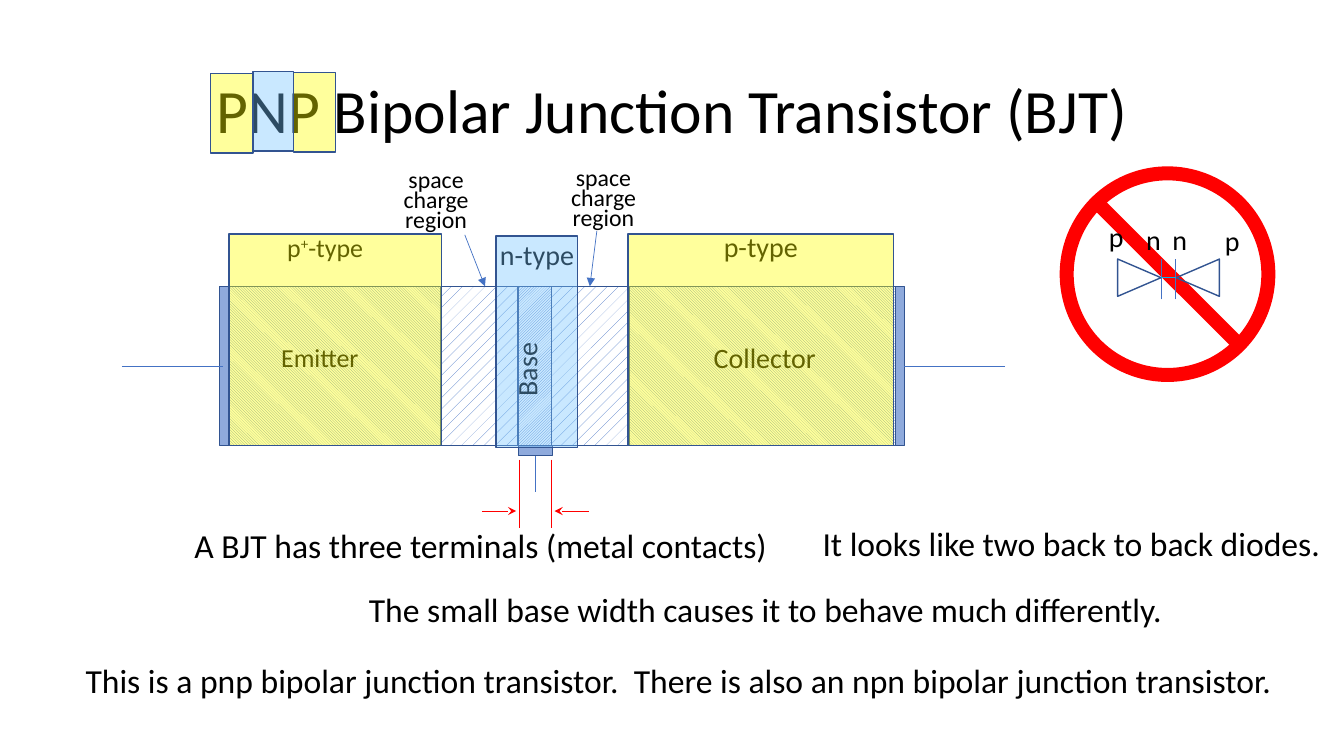
from pptx import Presentation
from pptx.dml.color import RGBColor
from pptx.enum.dml import MSO_PATTERN
from pptx.enum.shapes import MSO_CONNECTOR, MSO_SHAPE
from pptx.enum.text import MSO_ANCHOR, PP_ALIGN
from pptx.oxml.ns import qn
from pptx.util import Inches, Pt
from lxml.etree import SubElement

COLOURS = {"ink": "000000", "paper": "FFFFFF", "blue": "4472C4", "edge": "325491",
           "metal": "8FAADC", "red": "FF0000", "cyan": "00B0F0",
           "p": "FFFF00", "n": "75C4FF"}

# Device geometry in inches
TOP, HEIGHT = 2.84, 1.58
BOTTOM, MIDDLE = TOP + HEIGHT, TOP + HEIGHT / 2
LEFT, RIGHT = 2.27, 8.88
BASE_LEFT, BASE_RIGHT = 5.14, 5.47
METAL, LEAD = 0.09, 1.0
DIODE_X, DIODE_Y, DIODE_GAP = 11.59, 2.75, 0.14

# Content: (runs, left, top, width, height, size)
TITLE = (["PNP Bipolar Junction Transistor (BJT)"], 0.92, 0.4, 11.5, 1.45, 44)
REGION_NOTES = [(["space charge region"], left, top, 1.29, 0.72, 17)
                for left, top in ((5.34, 1.64), (3.68, 1.66))]
LABELS = [
    (["p", "+", "-type"], 2.75, 2.28, 1.01, 0.44, 18.5),
    (["n-type"], 4.86, 2.34, 1.01, 0.44, 20),
    (["p-type"], 7.08, 2.27, 1.01, 0.44, 20),
    (["Emitter"], 2.69, 3.37, 1.01, 0.44, 18.5),
    (["Collector"], 6.98, 3.37, 1.34, 0.44, 20),
]
BASE_LABEL = (["Base"], 5.04, 3.04, 0.52, 0.99, 20)
DIODE_LABELS = [([letter], left, top, 0.32, 0.43, 20) for letter, left, top in (
    ("p", 10.9, 2.17), ("p", 12.05, 2.21), ("n", 11.27, 2.2), ("n", 11.53, 2.2))]
STATEMENTS = [
    (["It looks like two back to back diodes."], 8.06, 5.18, 5.16, 0.63, 24),
    (["A BJT has three terminals (metal contacts)"], 1.83, 5.2, 10.39, 0.61, 24),
    (["This is a pnp bipolar junction transistor.  There is also an npn bipolar "
      "junction transistor."], 0.75, 6.54, 12.46, 0.51, 24),
    (["The small base width causes it to behave much differently."],
     3.56, 5.84, 8.19, 0.64, 24),
]
# Hatched silicon: (left, width, pattern)
HATCHES = [
    (LEFT, RIGHT - LEFT, MSO_PATTERN.LIGHT_DOWNWARD_DIAGONAL),
    (BASE_LEFT, 0.52, MSO_PATTERN.LIGHT_UPWARD_DIAGONAL),
    (4.37, 0.77, MSO_PATTERN.PERCENT_10),
    (BASE_RIGHT, 0.77, MSO_PATTERN.PERCENT_10),
]
CONTACTS = [(LEFT - METAL, TOP, METAL, HEIGHT), (RIGHT, TOP, METAL, HEIGHT),
            (BASE_LEFT, BOTTOM, 0.34, 0.1)]
# Translucent tints: (kind, left, top, width, height)
TINTS = [
    ("p", 2.09, 0.73, 0.42, 0.79), ("p", LEFT, 2.32, 2.11, 2.1),
    ("n", 2.51, 0.71, 0.4, 0.79), ("n", 4.92, 2.34, 0.81, 2.1),
    ("p", 2.91, 0.72, 0.42, 0.79), ("p", 6.23, 2.32, 2.63, 2.1),
]

deck = Presentation()
deck.slide_width, deck.slide_height = Inches(13.33), Inches(7.5)
page = deck.slides.add_slide(deck.slide_layouts[6])


def colour(name):
    return RGBColor.from_string(COLOURS[name])


def add_text(content, align=PP_ALIGN.LEFT, spacing=0.9, before=10, anchor=MSO_ANCHOR.TOP):
    runs, *place, size = content
    box = page.shapes.add_textbox(*map(Inches, place))
    box.text_frame.word_wrap = True
    box.text_frame.vertical_anchor = anchor
    para = box.text_frame.paragraphs[0]
    para.alignment, para.line_spacing, para.space_before = align, spacing, Pt(before)
    for text in runs:
        span = para.add_run()
        span.text = text
        span.font.name, span.font.size = "Calibri", Pt(size)
        span.font.color.rgb = colour("ink")
        if text == "+":
            span.font._element.set("baseline", "30000")
    return box


def add_outline(kind, left, top, width, height, line="edge", weight=1):
    shape = page.shapes.add_shape(kind, *map(Inches, (left, top, width, height)))
    shape.shadow.inherit = False
    shape.fill.background()
    shape.line.color.rgb = colour(line)
    shape.line.width = Pt(weight)
    return shape


def add_block(place, fill, alpha=None):
    block = add_outline(MSO_SHAPE.RECTANGLE, *place)
    block.fill.solid()
    block.fill.fore_color.rgb = colour(fill)
    if alpha:
        tone = block._element.spPr.find(qn("a:solidFill"))[0]
        SubElement(tone, qn("a:alpha")).set("val", str(alpha * 1000))


def add_line(x1, y1, x2, y2, line="blue", weight=0.5, arrow=None):
    link = page.shapes.add_connector(MSO_CONNECTOR.STRAIGHT, *map(Inches, (x1, y1, x2, y2)))
    link.line.color.rgb = colour(line)
    link.line.width = Pt(weight)
    if arrow:
        SubElement(link.line._get_or_add_ln(), qn("a:tailEnd")).set("type", arrow)
    SubElement(link._element.spPr, qn("a:effectLst"))


# Title
add_text(TITLE, PP_ALIGN.CENTER, before=0, anchor=MSO_ANCHOR.MIDDLE)

# Hatched silicon
for left, width, pattern in HATCHES:
    hatch = add_outline(MSO_SHAPE.RECTANGLE, left, TOP, width, HEIGHT)
    hatch.fill.patterned()
    hatch.fill.pattern = pattern
    hatch.fill.fore_color.rgb = colour("blue")
    hatch.fill.back_color.rgb = colour("paper")

# Labels and pointers to the space charge regions
for label in LABELS:
    add_text(label)
for note in REGION_NOTES:
    add_text(note, PP_ALIGN.CENTER, spacing=0.7)
add_text(BASE_LABEL).text_frame._txBody.bodyPr.set("vert", "vert270")
add_line(4.61, 2.33, 4.81, TOP, arrow="triangle")
add_line(5.92, 2.29, 5.85, TOP, arrow="triangle")

# Metal contacts and leads
for contact in CONTACTS:
    add_block(contact, "metal")
add_line(1.21, MIDDLE, 1.21 + LEAD, MIDDLE)
add_line(RIGHT + METAL + LEAD, MIDDLE, RIGHT + METAL, MIDDLE)
add_line(5.31, 4.88, 5.31, BOTTOM + 0.1)

# Prohibition sign
add_outline(MSO_SHAPE.OVAL, 10.58, 1.72, 2, 2, "red", 10)
add_line(10.88, 2.01, 12.29, 3.42, "red", 10)

# Doping tints
for kind, *place in TINTS:
    add_block(place, kind, alpha=39)

# Back to back diodes
for side, turn in ((1, 270), (-1, 90)):
    centre = DIODE_X + side * 0.29
    diode = add_outline(MSO_SHAPE.ISOSCELES_TRIANGLE, centre - 0.185, DIODE_Y - 0.21, 0.37, 0.43)
    diode.rotation = turn
    bar = DIODE_X + side * DIODE_GAP / 2
    add_line(bar, DIODE_Y + 0.22, bar, DIODE_Y - 0.18, weight=1)
add_line(DIODE_X - DIODE_GAP / 2, DIODE_Y, DIODE_X + DIODE_GAP / 2, DIODE_Y, "cyan", 1)
for label in DIODE_LABELS:
    add_text(label)

# Base width marks
for x, side in ((BASE_LEFT + 0.01, -1), (BASE_RIGHT, 1)):
    add_line(x, 4.56, x, 5.24, "red")
    add_line(x + side * 0.37, 5.07, x + side * 0.03, 5.07, "red", arrow="stealth")

# Statements
for statement in STATEMENTS:
    add_text(statement)

deck.save("out.pptx")
